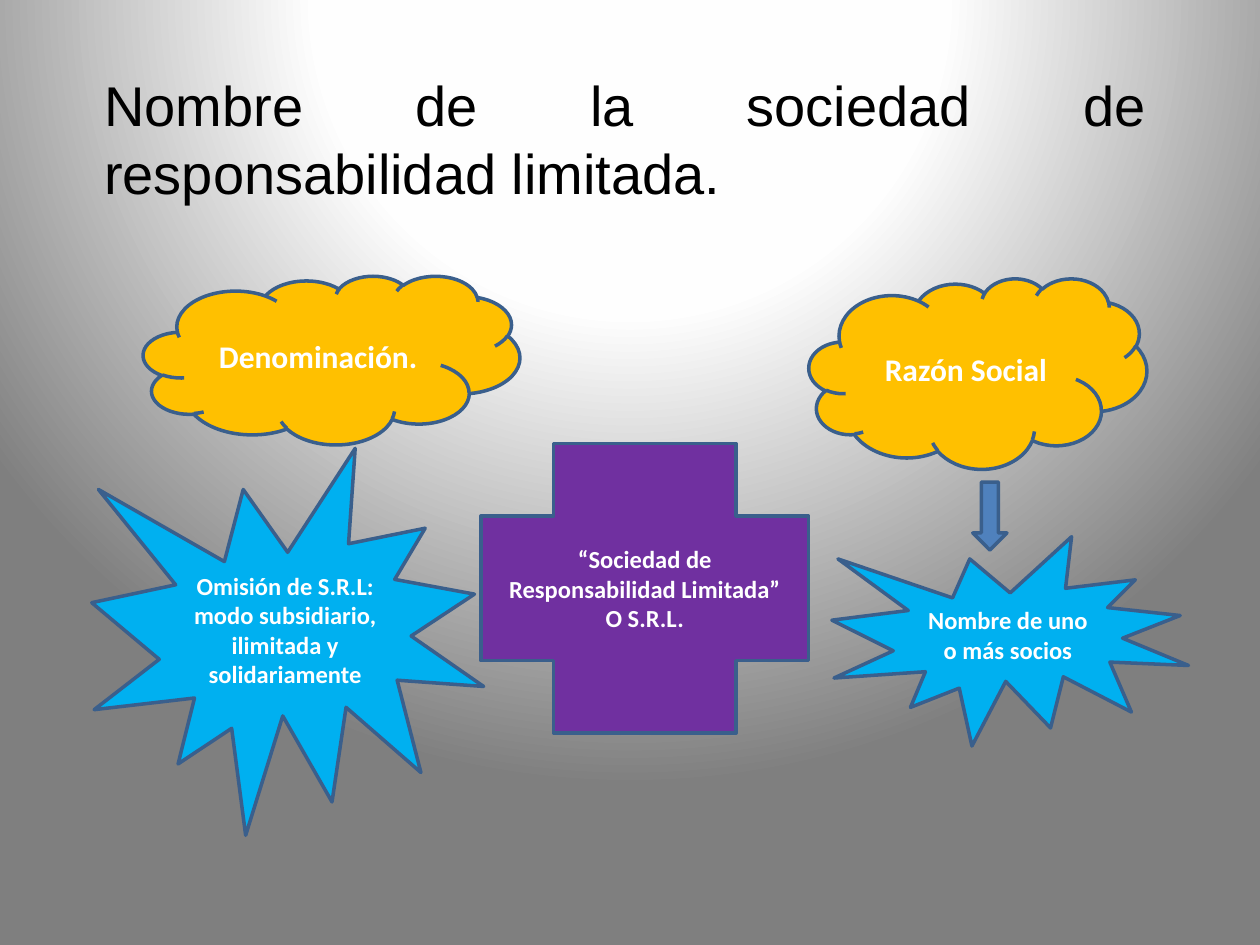
from pptx import Presentation
from pptx.dml.color import RGBColor
from pptx.enum.shapes import MSO_SHAPE as Preset
from pptx.enum.text import MSO_ANCHOR as Anchor, PP_ALIGN as Align
from pptx.oxml import parse_xml
from pptx.util import Cm, Pt

BLACK = RGBColor(0x00, 0x00, 0x00)
WHITE = RGBColor(0xFF, 0xFF, 0xFF)
OFF_WHITE = RGBColor(0xFE, 0xFE, 0xFE)
GRAY = RGBColor(0x7F, 0x7F, 0x7F)
GOLD = RGBColor(0xFF, 0xC0, 0x00)
SKY = RGBColor(0x00, 0xB0, 0xF0)
PURPLE = RGBColor(0x70, 0x30, 0xA0)
BLUE = RGBColor(0x4F, 0x81, 0xBD)
OUTLINE = RGBColor(0x3A, 0x5F, 0x8C)


def set_background(slide):
    """Radial gradient centred above the slide; python-pptx only offers linear ones."""
    stops = "".join(
        f'<a:gs pos="{percent * 1000}"><a:srgbClr val="{color}"/></a:gs>'
        for percent, color in ((0, WHITE), (40, OFF_WHITE), (100, GRAY))
    )
    background = parse_xml(
        '<p:bg xmlns:p="http://schemas.openxmlformats.org/presentationml/2006/main"'
        ' xmlns:a="http://schemas.openxmlformats.org/drawingml/2006/main">'
        f'<p:bgPr><a:gradFill rotWithShape="1"><a:gsLst>{stops}</a:gsLst>'
        '<a:path path="circle">'
        '<a:fillToRect l="50000" t="-80000" r="50000" b="180000"/></a:path>'
        '</a:gradFill><a:effectLst/></p:bgPr></p:bg>'
    )
    slide.element.cSld.insert(0, background)


def write(shape, lines, size, font, color, align, bold=False):
    frame = shape.text_frame
    frame.word_wrap = True
    frame.vertical_anchor = Anchor.MIDDLE
    for index, line in enumerate(lines):
        paragraph = frame.add_paragraph() if index else frame.paragraphs[0]
        paragraph.alignment = align
        run = paragraph.add_run()
        run.text = line
        run.font.name = font
        run.font.size = Pt(size)
        run.font.bold = bold
        run.font.color.rgb = color


def add_figure(slide, preset, left, top, width, height, color, lines=(), size=14):
    shape = slide.shapes.add_shape(preset, Cm(left), Cm(top), Cm(width), Cm(height))
    shape.shadow.inherit = False
    shape.fill.solid()
    shape.fill.fore_color.rgb = color
    shape.line.color.rgb = OUTLINE
    shape.line.width = Pt(2)
    write(shape, lines, size, "Calibri", WHITE, Align.CENTER, bold=True)


def add_title(slide, left, top, width, height):
    title = slide.shapes.add_textbox(Cm(left), Cm(top), Cm(width), Cm(height))
    write(title, ["Nombre de la sociedad de responsabilidad limitada."],
          32, "Arial", BLACK, Align.JUSTIFY)


def add_business_name(slide, left, top):
    # Cloud, arrow and the burst it points to
    add_figure(slide, Preset.CLOUD, left, top, 6.81, 3.84, GOLD, ["Razón Social"], 18)
    add_figure(slide, Preset.DOWN_ARROW, left + 3.3, top + 4.11, 0.69, 1.37, BLUE)
    add_figure(slide, Preset.EXPLOSION1, left + 0.46, top + 5.21, 7.19, 4.22, SKY,
               ["Nombre de uno o más socios"])


def add_required_words(slide, left, top, width, height):
    add_figure(slide, Preset.CROSS, left, top, width, height, PURPLE,
               ["“Sociedad de Responsabilidad Limitada”", "O S.R.L."])


def add_denomination(slide, left, top):
    # Cloud with the burst below it
    add_figure(slide, Preset.CLOUD, left + 1.04, top, 7.59, 3.4, GOLD,
               ["Denominación."], 18)
    add_figure(slide, Preset.EXPLOSION1, left, top + 3.48, 7.9, 7.8, SKY,
               ["Omisión de S.R.L: modo subsidiario, ilimitada y solidariamente"])


def main():
    presentation = Presentation()
    presentation.slide_width = Cm(25.4)
    presentation.slide_height = Cm(19.05)
    slide = presentation.slides.add_slide(presentation.slide_layouts[6])

    set_background(slide)
    add_title(slide, 1.85, 1.73, 21.51, 2.11)
    add_business_name(slide, 16.31, 5.61)
    add_required_words(slide, 9.7, 8.94, 6.6, 5.84)
    add_denomination(slide, 1.85, 5.56)

    presentation.save("out.pptx")


if __name__ == "__main__":
    main()
